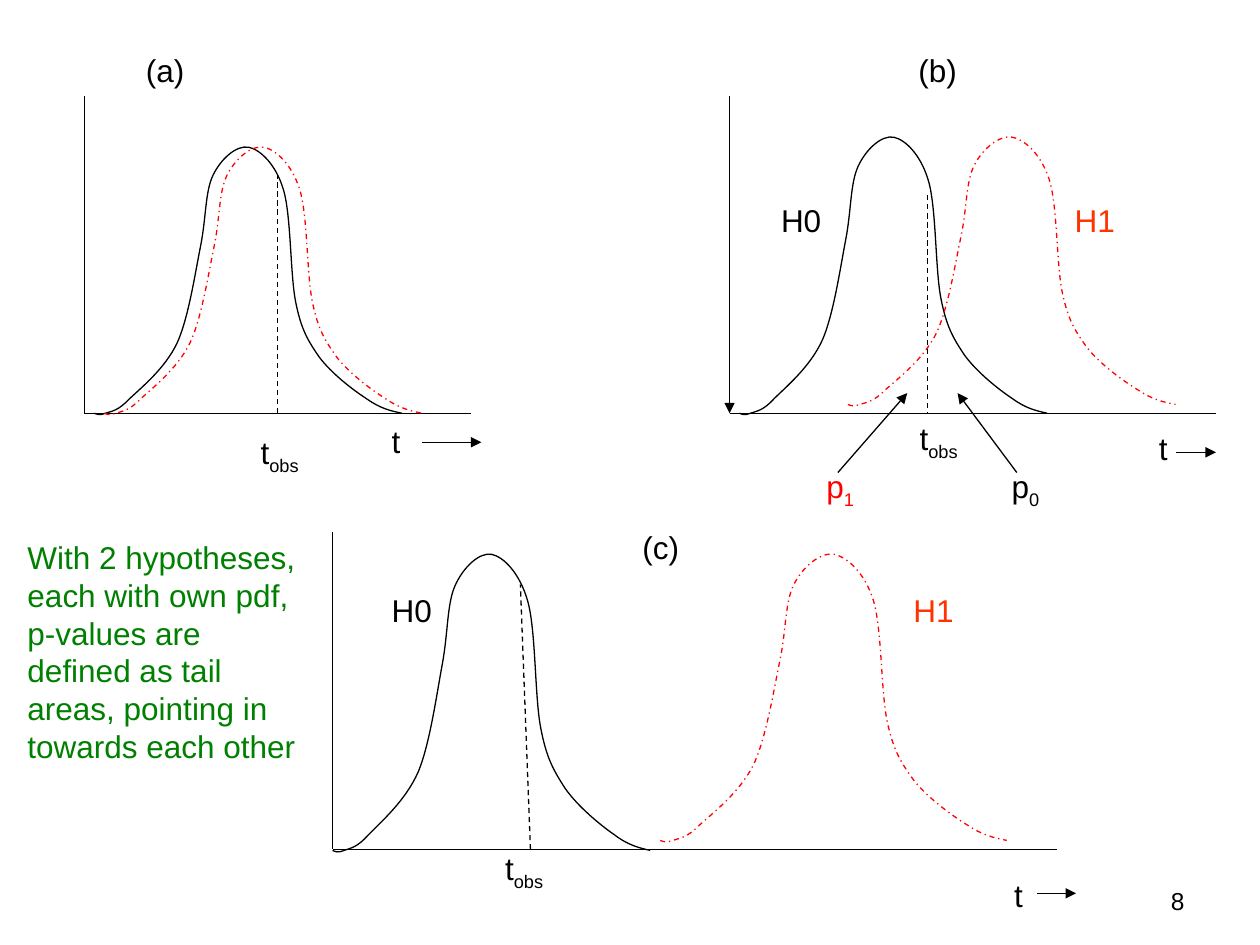
from lxml import etree
from pptx import Presentation
from pptx.dml.color import RGBColor
from pptx.enum.dml import MSO_LINE
from pptx.enum.shapes import MSO_CONNECTOR
from pptx.enum.text import MSO_ANCHOR, PP_ALIGN
from pptx.oxml.ns import qn
from pptx.util import Inches, Pt

STRAIGHT = MSO_CONNECTOR.STRAIGHT
DASH, DASH_DOT = MSO_LINE.DASH, MSO_LINE.DASH_DOT
MIDDLE, LEFT, RIGHT = MSO_ANCHOR.MIDDLE, PP_ALIGN.LEFT, PP_ALIGN.RIGHT

THEME = {
    "font": "Arial", "body": Pt(18), "page": Pt(14), "line": Pt(0.75),
    "black": RGBColor(0, 0, 0), "red": RGBColor(0xFF, 0, 0),
    "orange": RGBColor(0xFF, 0x33, 0), "green": RGBColor(0, 0x80, 0),
}

prs = Presentation()
prs.slide_width, prs.slide_height = Inches(10), Inches(7.5)
slide = prs.slides.add_slide(prs.slide_layouts[6])


def add_line(start, end, dash=None, arrow=False):
    line = slide.shapes.add_connector(
        STRAIGHT, *(Inches(value) for value in (*start, *end)))
    line.line.color.rgb = THEME["black"]
    line.line.width = THEME["line"]
    if dash:
        line.line.dash_style = dash
    if arrow:
        etree.SubElement(line.line._get_or_add_ln(), qn("a:tailEnd"), type="triangle")
    etree.SubElement(line._element.spPr, qn("a:effectLst"))


def add_label(text, left, top, width=0.65, height=0.4, sub="", color="black",
              size="body", align=LEFT):
    """Add a text box, with `sub` set as a subscript after the text."""
    box = slide.shapes.add_textbox(
        Inches(left), Inches(top), Inches(width), Inches(height))
    frame = box.text_frame
    frame.word_wrap = True
    if size == "page":
        frame.vertical_anchor = MIDDLE
    paragraph = frame.paragraphs[0]
    paragraph.alignment = align
    for part in filter(None, (text, sub)):
        run = paragraph.add_run()
        run.text = part
        run.font.name = THEME["font"]
        run.font.size = THEME[size]
        run.font.color.rgb = THEME[color]
    if sub:
        run.font._element.set("baseline", "-25000")


# Axes: origin x, top y, baseline y, right end, arrow on the vertical axis
for x, top, base, right, arrow in [
    (0.67, 0.76, 3.28, 3.74, False),
    (5.79, 0.76, 3.28, 9.65, True),
    (2.64, 4.22, 6.74, 8.39, False),
]:
    add_line((x, top), (x, base), arrow=arrow)
    add_line((x, base), (right, base))

# One bell curve as Bezier points: x from its left end, y above its base
BELL_WIDTH, BELL_HEIGHT = 2.75, 2.29
BELL = [
    (0.02, -0.01), (0.05, -0.02), (0.10, 0), (0.16, 0.02), (0.21, 0.02), (0.31, 0.12),
    (0.42, 0.22), (0.63, 0.38), (0.74, 0.60), (0.84, 0.81), (0.90, 1.19), (0.95, 1.43),
    (1.00, 1.67), (0.99, 1.89), (1.06, 2.03), (1.13, 2.17), (1.27, 2.29), (1.38, 2.27),
    (1.48, 2.25), (1.62, 2.13), (1.69, 1.91), (1.76, 1.69), (1.75, 1.19), (1.80, 0.95),
    (1.85, 0.71), (1.91, 0.62), (2.01, 0.48), (2.12, 0.34), (2.31, 0.20), (2.44, 0.12),
    (2.56, 0.04), (2.65, 0.02), (2.75, 0),
]

# Curves: left, base, width, height, colour, dash
for left, base, width, height, color, dash in [
    (5.87, 3.28, 2.44, 2.21, "black", None),
    (0.75, 3.28, 2.44, 2.13, "black", None),
    (2.64, 6.75, 2.52, 2.37, "black", None),
    (0.83, 3.28, 2.52, 2.13, "red", DASH_DOT),
    (6.73, 3.21, 2.60, 2.14, "red", DASH_DOT),
    (5.24, 6.67, 2.75, 2.29, "red", DASH_DOT),
]:
    builder = slide.shapes.build_freeform(Inches(left), Inches(base))
    builder.add_line_segments(
        [(Inches(left + x * width / BELL_WIDTH), Inches(base - y * height / BELL_HEIGHT))
         for x, y in BELL], close=False)
    curve = builder.convert_to_shape()
    curve.shadow.inherit = False
    curve.fill.background()
    curve.line.color.rgb = THEME[color]
    curve.line.width = THEME["line"]
    if dash:
        curve.line.dash_style = dash
    # Every three straight segments become one cubic Bezier
    outline = curve._element.xpath(".//a:path")[0]
    segments = outline.findall(qn("a:lnTo"))
    for first in range(0, len(segments), 3):
        bezier = etree.SubElement(outline, qn("a:cubicBezTo"))
        for segment in segments[first:first + 3]:
            bezier.append(segment[0])
            outline.remove(segment)

# Observed values
for start, end in [
    ((2.2, 3.28), (2.2, 1.39)),
    ((7.36, 1.55), (7.36, 3.28)),
    ((4.21, 6.74), (4.13, 4.64)),
]:
    add_line(start, end, dash=DASH)
for left, top in [(1.97, 3.39), (7.2, 3.28), (3.91, 6.69)]:
    add_label("t", left, top, sub="obs")

# Direction of t
for left, top, start, end, y in [
    (3.01, 3.3, 3.35, 3.82, 3.51),
    (9.1, 3.36, 9.33, 9.65, 3.59),
    (7.95, 6.9, 8.23, 8.54, 7.09),
]:
    add_label("t", left, top, width=0.3)
    add_line((start, y), (end, y), arrow=True)

# Panel letters and hypotheses
for text, left, top in [("(a)", 1.06, 0.36), ("(b)", 7.19, 0.36), ("(c)", 5, 4.14)]:
    add_label(text, left, top)
for h0_left, h1_left, top in [(6.1, 8.43, 1.55), (3.01, 7.15, 4.64)]:
    add_label("H0", h0_left, top)
    add_label("H1", h1_left, top, color="orange")

# Tail areas of panel (b)
add_label("p", 6.46, 3.66, sub="1", color="red")
add_line((6.65, 3.75), (7.2, 3.12), arrow=True)
add_label("p", 7.93, 3.66, sub="0")
add_line((8.07, 3.75), (7.6, 3.12), arrow=True)

add_label("With 2 hypotheses, each with own pdf, p-values are defined as tail areas, "
          "pointing in towards each other", 0.12, 4.22, 2.36, 1.92, color="green")
add_label("8", 7.17, 6.95, 2.33, size="page", align=RIGHT)

prs.save("out.pptx")
